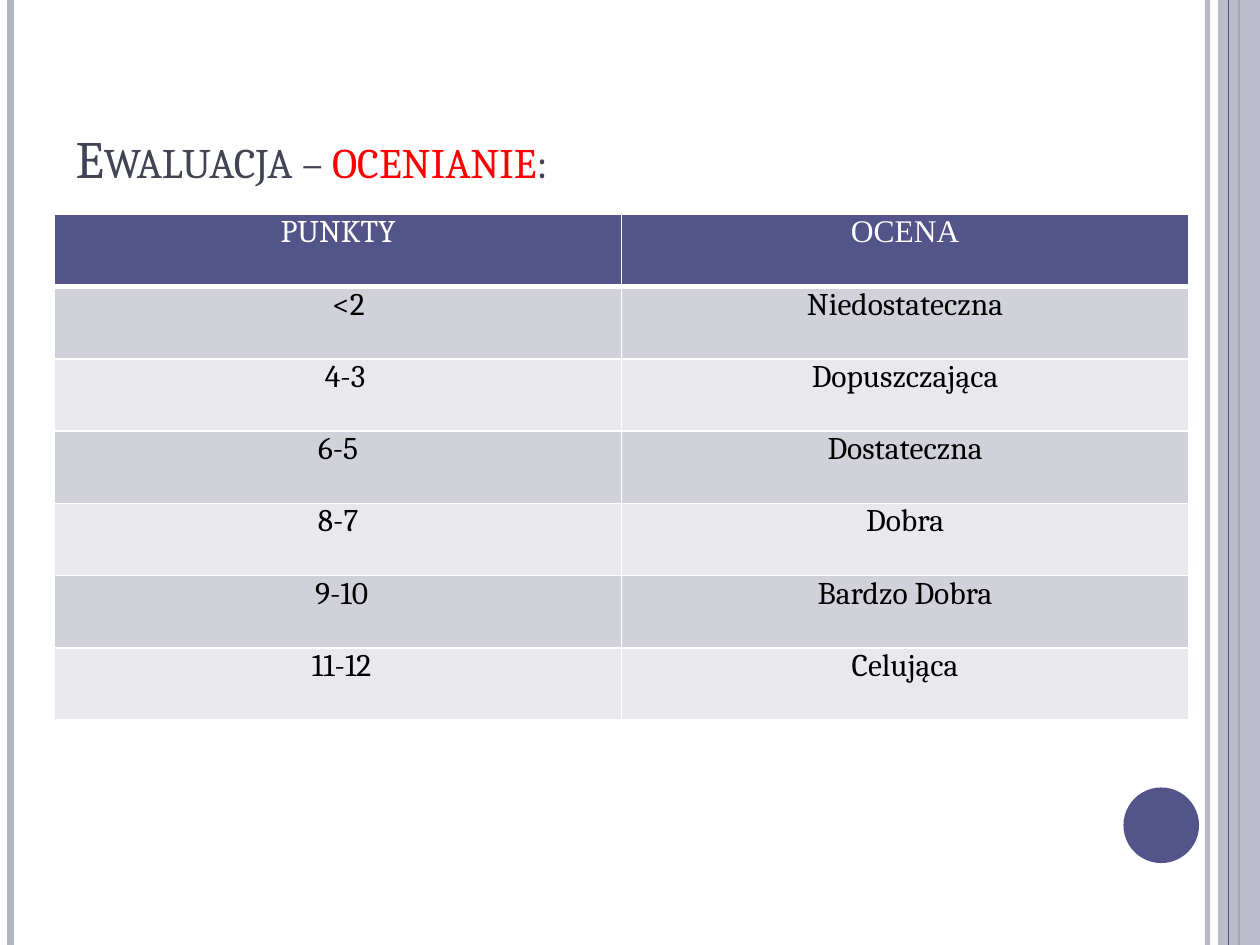
from pptx import Presentation
from pptx.dml.color import RGBColor
from pptx.enum.shapes import MSO_CONNECTOR, MSO_SHAPE
from pptx.enum.text import MSO_ANCHOR, PP_ALIGN
from pptx.oxml.ns import qn
from pptx.util import Pt
from lxml.etree import SubElement

COLORS = {
    "accent": "53548A",
    "stripe": "B3B4C4",
    "title": "424456",
    "highlight": "FF0000",
    "dark_row": "D1D1DA",
    "light_row": "E9E9ED",
    "white": "FFFFFF",
    "black": "000000",
}
WIDTH, HEIGHT = 720, 540
GRADES = [
    ("PUNKTY", "OCENA", 0),
    ("<2", "Niedostateczna", 12),
    ("4-3", "Dopuszczająca", 8),
    ("6-5", "Dostateczna", 0),
    ("8-7", "Dobra", 0),
    ("9-10", "Bardzo Dobra", 4),
    ("11-12", "Celująca", 4),
]


class SlideBuilder:
    font = "Cambria"
    cell_size = 18
    cell_margin = 5

    def __init__(self, slide):
        self.slide = slide

    def color(self, name):
        return RGBColor.from_string(COLORS[name])

    def fade(self, fill_element, opacity):
        color = fill_element.find(".//" + qn("a:srgbClr"))
        SubElement(color, qn("a:alpha"), val=str(opacity * 1000))

    def run(self, paragraph, text, size, color, font=None):
        run = paragraph.add_run()
        run.text = text
        run.font.name = font or self.font
        run.font.size = Pt(size)
        run.font.bold = False
        run.font.color.rgb = self.color(color)
        return run

    def title(self, left, top, width, height, parts, size):
        shape = self.slide.shapes.title
        shape.left, shape.top = Pt(left), Pt(top)
        shape.width, shape.height = Pt(width), Pt(height)
        frame = shape.text_frame
        frame.word_wrap = True
        frame.vertical_anchor = MSO_ANCHOR.BOTTOM
        paragraph = frame.paragraphs[0]
        paragraph.alignment = PP_ALIGN.LEFT
        for text, color in parts:
            run = self.run(paragraph, text, size, color)
            run.font._element.set("cap", "small")

    def vertical_line(self, x, width, color, opacity=100):
        line = self.slide.shapes.add_connector(
            MSO_CONNECTOR.STRAIGHT, Pt(x), Pt(0), Pt(x), Pt(HEIGHT))
        line.line.width = Pt(width)
        line.line.color.rgb = self.color(color)
        properties = line._element.spPr
        if opacity < 100:
            self.fade(properties.find(qn("a:ln")), opacity)
        SubElement(properties, qn("a:effectLst"))

    def shape(self, kind, left, top, width, height, color, opacity=100):
        shape = self.slide.shapes.add_shape(
            kind, Pt(left), Pt(top), Pt(width), Pt(height))
        shape.shadow.inherit = False
        shape.fill.solid()
        shape.fill.fore_color.rgb = self.color(color)
        shape.line.fill.background()
        if opacity < 100:
            self.fade(shape._element.spPr.find(qn("a:solidFill")), opacity)

    def borders(self, cell, widths):
        properties = cell._tc.get_or_add_tcPr()
        for side, width in zip("LRTB", widths):
            line = SubElement(properties, qn("a:ln" + side), w=str(Pt(width)))
            fill = SubElement(line, qn("a:solidFill"))
            SubElement(fill, qn("a:srgbClr"), val=COLORS["white"])

    def cell(self, cell, text, fill, color, widths, shift=0, font=None):
        self.borders(cell, widths)
        cell.fill.solid()
        cell.fill.fore_color.rgb = self.color(fill)
        cell.margin_left = Pt(self.cell_margin + shift)
        cell.margin_right = Pt(self.cell_margin)
        cell.margin_top = cell.margin_bottom = Pt(0)
        cell.vertical_anchor = MSO_ANCHOR.TOP
        paragraph = cell.text_frame.paragraphs[0]
        paragraph.alignment = PP_ALIGN.CENTER
        self.run(paragraph, text, self.cell_size, color, font)

    def grade_table(self, left, top, width, row_height, grades):
        table = self.slide.shapes.add_table(
            len(grades), 2, Pt(left), Pt(top), Pt(width),
            Pt(row_height * len(grades))).table
        for column in table.columns:
            column.width = Pt(width / 2)
        for index, (points, grade, shift) in enumerate(grades):
            table.rows[index].height = Pt(row_height)
            header = index == 0
            if header:
                fill, color, font = "accent", "white", "Times New Roman"
            else:
                fill = "dark_row" if index % 2 else "light_row"
                color, font = "black", None
            widths = (1, 1, 3 if index == 1 else 1, 3 if header else 1)
            self.cell(table.cell(index, 0), points, fill, color, widths, shift)
            self.cell(table.cell(index, 1), grade, fill, color, widths, font=font)


def main():
    presentation = Presentation()
    presentation.slide_width, presentation.slide_height = Pt(WIDTH), Pt(HEIGHT)
    slide = presentation.slides.add_slide(presentation.slide_layouts[5])
    builder = SlideBuilder(slide)

    builder.vertical_line(690, 3, "stripe", opacity=93)
    builder.vertical_line(6, 4.5, "stripe")
    builder.vertical_line(708, 1.5, "accent")
    builder.shape(MSO_SHAPE.RECTANGLE, 696, 0, 24, HEIGHT, "stripe", opacity=87)
    builder.vertical_line(702, 0.75, "accent")
    builder.shape(MSO_SHAPE.OVAL, 642, 450, 43.2, 43.2, "accent")

    builder.title(36, 21.6, 588, 90, [
        ("Ewaluacja – ", "title"),
        ("ocenianie", "highlight"),
        (":", "title"),
    ], size=30)
    builder.grade_table(31.2, 122.6, 648, 41.3, GRADES)

    presentation.save("out.pptx")


if __name__ == "__main__":
    main()
